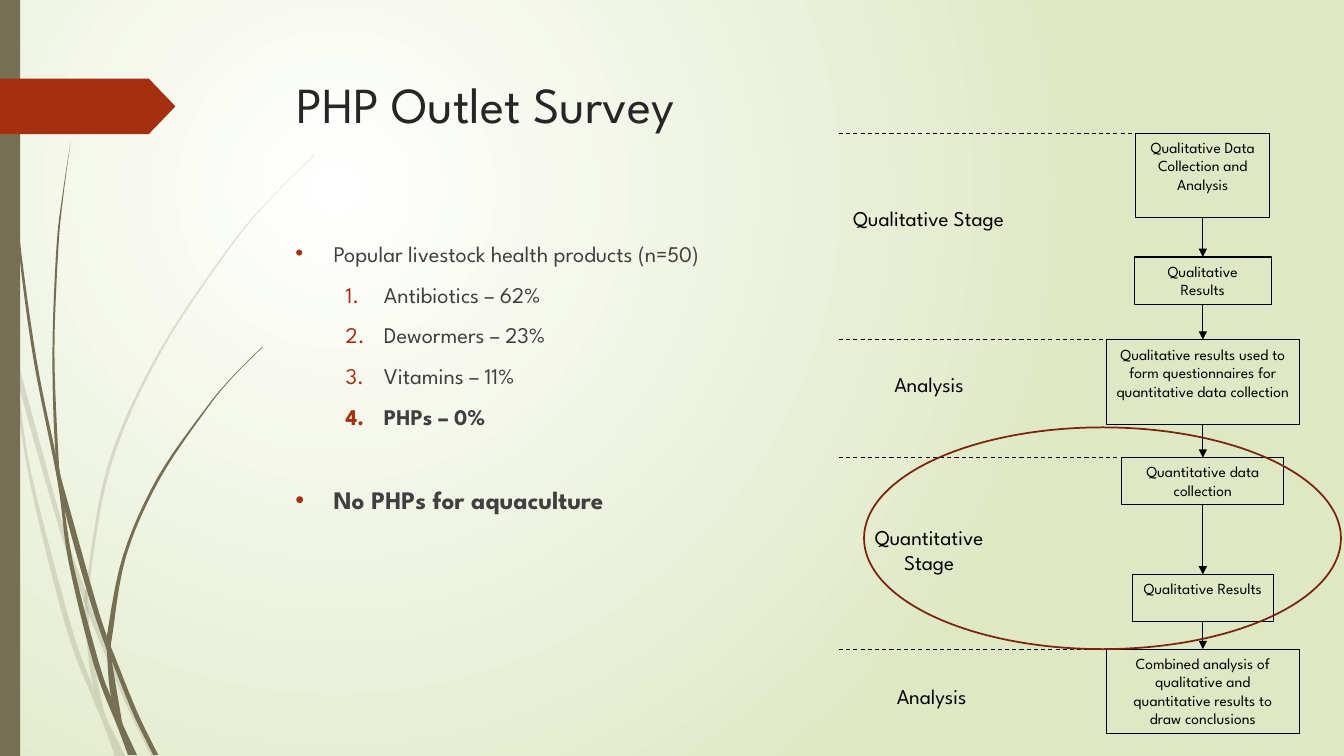
from lxml.etree import SubElement as Sub
from pptx import Presentation
from pptx.dml.color import RGBColor as Rgb
from pptx.enum.dml import MSO_LINE as Dash
from pptx.enum.shapes import MSO_CONNECTOR as Conn, MSO_SHAPE as Kind
from pptx.enum.text import PP_ALIGN as Align
from pptx.oxml.ns import qn
from pptx.util import Inches, Pt

FONT = "League Spartan"
HUES = {"white": "FFFFFF", "pale": "DFE8C4", "stem": "766F54", "rust": "A53010",
        "ring": "7A240C", "title": "262626", "body": "404040", "ink": "000000"}

LIGHT = [
    ([(0, 2.99), (0.1, 3.44), (0.11, 3.5)],
     [(0, 2.82), (0.09, 3.22), (0.11, 3.5)]),
    ([(0.14, 3.45), (0.17, 3.76), (0.58, 5.22), (0.84, 5.99), (0.88, 6.1),
      (1.23, 6.94), (1.5, 7.5)],
     [(0.14, 3.45), (0.62, 5.2), (0.85, 5.86), (0.92, 6.07), (1.27, 6.92), (1.55, 7.5)]),
    ([(0.11, 3.5), (0.28, 4.7), (0.65, 6.21), (0.92, 6.93), (1.01, 7.14), (1.14, 7.5)],
     [(0.11, 3.5), (0.17, 3.76), (0.31, 4.69), (0.7, 6.19), (0.93, 6.83),
      (1.05, 7.11), (1.24, 7.5)]),
    ([(3.12, 1.53), (2.68, 1.97), (2.28, 2.44), (1.58, 3.48), (1.07, 4.61),
      (0.85, 5.84), (0.84, 5.99), (0.87, 6.46), (0.93, 6.83), (1.05, 7.11)],
     [(3.12, 1.54), (2.68, 1.98), (2.29, 2.45), (1.6, 3.49), (1.1, 4.62),
      (0.88, 5.84), (0.88, 6.08), (0.91, 6.46), (1.03, 7.06)]),
]
DARK = [
    ([(0.03, 0), (0.07, 1.1), (0.17, 2.33), (0.33, 3.55), (0.57, 4.77),
      (0.68, 5.57), (0.93, 6.59), (1.17, 7.22), (1.27, 7.49)],
     [(0.04, 0), (0.08, 1.09), (0.19, 2.32), (0.36, 3.55), (0.55, 4.49), (0.6, 4.72),
      (0.72, 5.56), (0.98, 6.57), (1.1, 6.91), (1.22, 7.19), (1.36, 7.49)]),
    ([(0.6, 4.72), (0.64, 5.05), (0.88, 5.92), (1.06, 6.45), (1.11, 6.56),
      (1.32, 7.08), (1.52, 7.49)],
     [(0.6, 4.72), (0.93, 5.9), (1.06, 6.31), (1.13, 6.49), (1.36, 7.06), (1.57, 7.49)]),
    ([(0.7, 1.41), (0.62, 1.93), (0.56, 2.45), (0.52, 3.49), (0.55, 4.49), (0.64, 5.05)],
     [(0.7, 1.41), (0.63, 1.93), (0.58, 2.45), (0.54, 3.49), (0.58, 4.53), (0.6, 4.72)]),
    ([(2.6, 3.44), (2.31, 3.73), (2.04, 4.05), (1.56, 4.74), (1.22, 5.51),
      (1.06, 6.31), (1.06, 6.45), (1.1, 6.91), (1.22, 7.19)],
     [(2.61, 3.44), (2.31, 3.74), (2.05, 4.06), (1.58, 4.76), (1.25, 5.52),
      (1.11, 6.33), (1.1, 6.41), (1.11, 6.56), (1.21, 7.16)]),
]
STEPS = [
    (0, 1.33, 0.84, "Qualitative Data Collection and Analysis"),
    (1.23, 1.36, 0.47, "Qualitative Results"),
    (2.05, 1.92, 0.84, "Qualitative results used to form questionnaires for "
                       "quantitative data collection"),
    (3.22, 1.61, 0.47, "Quantitative data collection"),
    (4.38, 1.4, 0.47, "Qualitative Results"),
    (5.12, 1.91, 0.84, "Combined analysis of qualitative and quantitative results "
                       "to draw conclusions"),
]
STAGES = [(0.04, 0.67, 1.7, 0.61, "Qualitative Stage"), (0.39, 2.32, 1.01, 0.35, "Analysis"),
          (0.08, 3.83, 1.63, 0.61, "Quantitative Stage"), (0.33, 5.41, 1.18, 0.35, "Analysis")]
ITEMS = [("Popular livestock health products (n=50)", 0.38, 16, False, 0),
         ("Antibiotics – 62%", 0.88, 16, False, 10),
         ("Dewormers – 23%", 0.88, 16, False, 10),
         ("Vitamins – 11%", 0.88, 16, False, 10),
         ("PHPs – 0%", 0.88, 16, True, 10),
         ("No PHPs for aquaculture", 0.38, 18, True, 39)]


def hue(name):
    return Rgb.from_string(HUES[name])


def box(at):
    return [Inches(n) for n in at]


def style(font, size, name, bold=False):
    font.name, font.size, font.bold = FONT, Pt(size), bold
    font.color.rgb = hue(name)


def solid(shape, name):
    shape.shadow.inherit = False
    shape.fill.solid()
    shape.fill.fore_color.rgb = hue(name)
    shape.line.fill.background()


def frame(shapes, kind, at, name, width):
    shape = shapes.add_shape(kind, *box(at))
    shape.shadow.inherit = False
    shape.fill.background()
    shape.line.color.rgb = hue(name)
    shape.line.width = Pt(width)
    return shape


def label(shapes, at, text, size, name, align=Align.LEFT):
    area = shapes.add_textbox(*box(at)).text_frame
    area.word_wrap = True
    para = area.paragraphs[0]
    para.text, para.alignment = text, align
    style(para.font, size, name)


def line(shapes, *ends):
    link = shapes.add_connector(Conn.STRAIGHT, *box(ends))
    link.line.color.rgb = hue("ink")
    link.line.width = Pt(0.75)
    Sub(link._element.spPr, qn("a:effectLst"))
    return link


def curve(knots, parts=6):
    pads = [knots[0], *knots, knots[-1]]
    out = [knots[0]]
    for a, b, c, d in zip(pads, pads[1:], pads[2:], pads[3:]):
        for t in (n / parts for n in range(1, parts + 1)):
            out.append(tuple(
                q + t * (r - p) / 2 + t * t * (2 * p - 5 * q + 4 * r - s) / 2
                + t ** 3 * (3 * q - p - 3 * r + s) / 2
                for p, q, r, s in zip(a, b, c, d)))
    return out


def grass(shapes, stems, alpha):
    for left, right in stems:
        edge = [box(dot) for dot in curve(left) + curve(right)[::-1]]
        form = shapes.build_freeform(*edge[0])
        form.add_line_segments(edge[1:], close=True)
        stem = form.convert_to_shape()
        solid(stem, "stem")
        tint = stem._element.spPr.find(qn("a:solidFill"))[0]
        Sub(tint, qn("a:alpha"), val=str(alpha * 1000))


def back(slide):
    fill = slide.background.fill
    fill.gradient()
    for stop, name in zip(fill.gradient_stops, ("white", "pale")):
        stop.color.rgb = hue(name)
    grad = slide.background._cSld.find(".//" + qn("a:gradFill"))
    grad.remove(grad.find(qn("a:lin")))
    ring = Sub(grad, qn("a:path"), path="circle")
    Sub(ring, qn("a:fillToRect"), l="50000", t="50000", r="100000", b="100000")


def side(shapes, x, y, high):
    grass(shapes, LIGHT, 20)
    grass(shapes, DARK, 100)
    solid(shapes.add_shape(Kind.RECTANGLE, *box((x, y, 0.2, high))), "stem")
    tag = shapes.add_shape(Kind.PENTAGON, *box((x, y + 0.78, 1.74, 0.55)))
    tag.adjustments[0] = 0.48
    solid(tag, "rust")


def points(shapes, at):
    area = shapes.add_textbox(*box(at)).text_frame
    area.word_wrap = True
    for n, (text, left, size, bold, gap) in enumerate(ITEMS):
        para = area.add_paragraph() if n else area.paragraphs[0]
        para.text = text
        prop = para._p.get_or_add_pPr()
        prop.set("marL", str(Inches(left)))
        prop.set("indent", str(-Inches(0.38)))
        para.space_before = Pt(gap)
        Sub(Sub(prop, qn("a:buClr")), qn("a:srgbClr"), val=HUES["rust"])
        if left > 0.5:
            Sub(prop, qn("a:buFont"), typeface="+mj-lt")
            Sub(prop, qn("a:buAutoNum"), type="arabicPeriod")
        else:
            Sub(prop, qn("a:buFont"), typeface="Arial")
            Sub(prop, qn("a:buChar"), char="•")
        style(para.font, size, "body", bold)


def flow(shapes, x, y):
    mid = x + 3.61
    cards = []
    for n, (top, wide, high, text) in enumerate(STEPS):
        card = frame(shapes, Kind.RECTANGLE, (mid - wide / 2, y + top, wide, high), "ink", 0.75)
        area = card.text_frame
        area.word_wrap = True
        area.vertical_anchor = 1
        para = area.paragraphs[0]
        para.text, para.alignment = text, Align.CENTER
        style(para.font, 11, "ink")
        cards.append(card)
        if n in (0, 2, 3, 5):
            rule = line(shapes, x, y + top, mid + wide / 2, y + top)
            rule.line.dash_style = Dash.DASH
    for prev, card in zip(cards, cards[1:]):
        link = line(shapes, mid, y, mid, y)
        link.begin_connect(prev, 2)
        link.end_connect(card, 0)
        Sub(link.line._get_or_add_ln(), qn("a:tailEnd"), type="triangle")
    for left, top, wide, high, text in STAGES:
        label(shapes, (x + left, y + top, wide, high), text, 15, "ink", Align.CENTER)
    frame(shapes, Kind.OVAL, (x + 0.25, y + 2.92, 4.73, 2.2), "ring", 1.25)


def main():
    deck = Presentation()
    deck.slide_width, deck.slide_height = box((13.33, 7.5))
    slide = deck.slides.add_slide(deck.slide_layouts[6])
    shapes = slide.shapes
    back(slide)
    side(shapes, 0, 0, 7.5)
    label(shapes, (2.84, 0.68, 9.75, 1.4), "PHP Outlet Survey", 36, "title")
    points(shapes, (2.83, 2.33, 5.01, 3.93))
    flow(shapes, 8.32, 1.32)
    deck.save("out.pptx")


if __name__ == "__main__":
    main()
